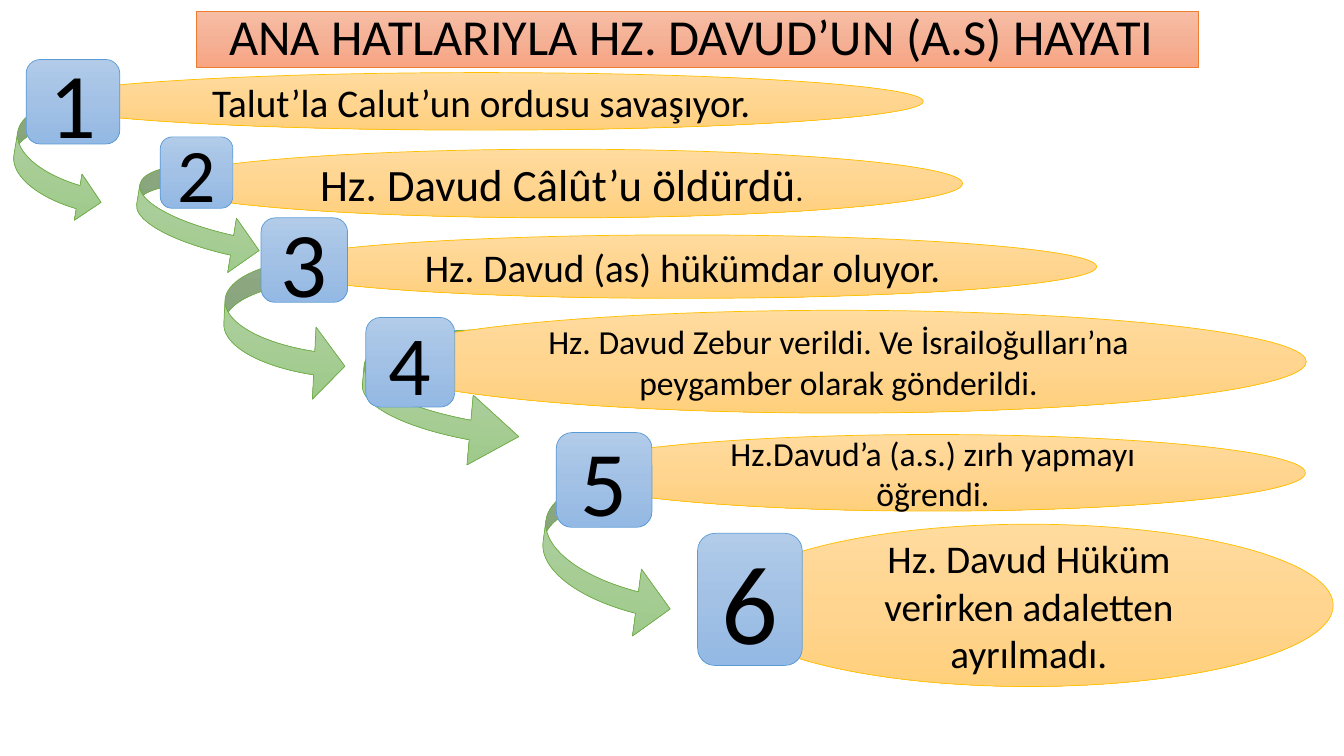
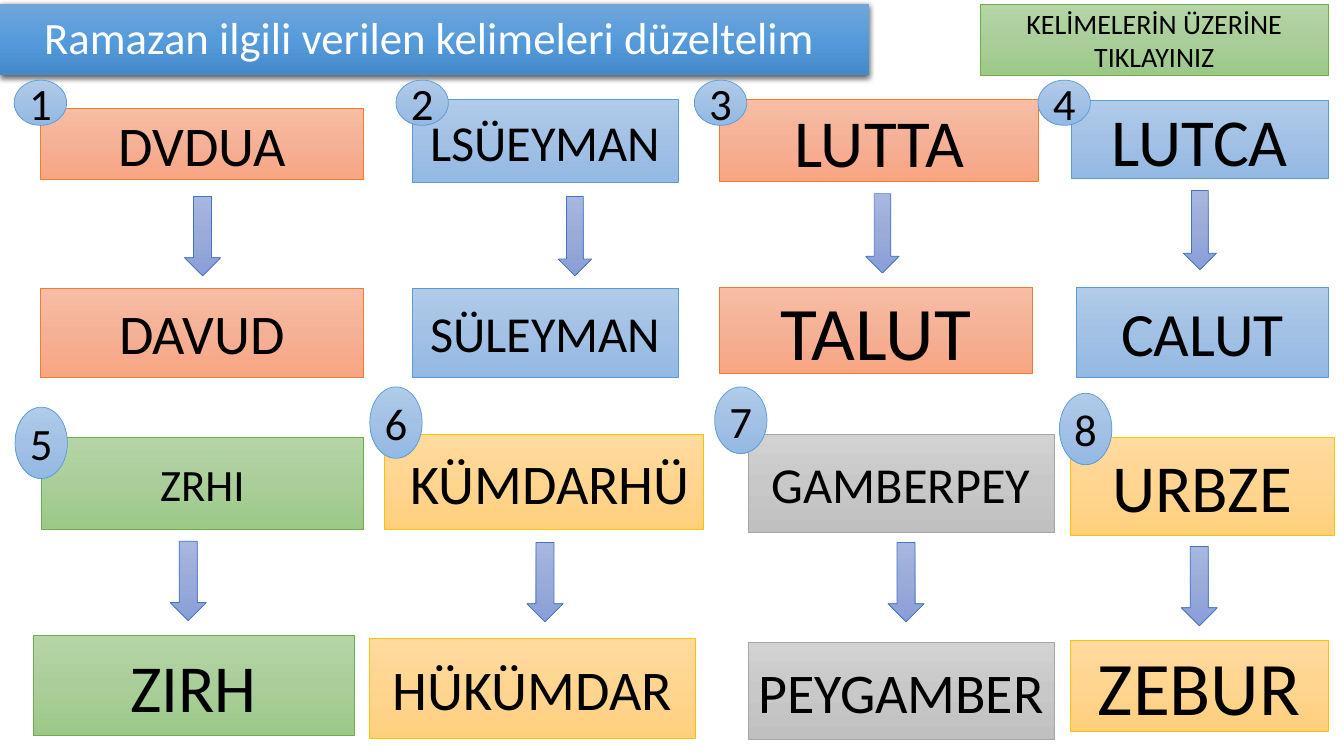
from copy import deepcopy
from dataclasses import dataclass

from pptx import Presentation
from pptx.dml.color import RGBColor
from pptx.enum.shapes import MSO_SHAPE
from pptx.enum.text import MSO_ANCHOR, MSO_AUTO_SIZE, PP_ALIGN
from pptx.oxml.xmlchemy import OxmlElement
from pptx.util import Cm, Pt

FONT = "Calibri"
BLACK = RGBColor(0x00, 0x00, 0x00)
WHITE = RGBColor(0xFF, 0xFF, 0xFF)


@dataclass
class Look:
    """Three gradient colours from top to bottom and an outline."""
    top: RGBColor
    middle: RGBColor
    bottom: RGBColor
    line: RGBColor | None


GREEN = Look(RGBColor(0xB5, 0xD5, 0xA7), RGBColor(0xAA, 0xCE, 0x9A),
             RGBColor(0x9C, 0xC9, 0x87), RGBColor(0x70, 0xAD, 0x47))
GOLD = Look(RGBColor(0xFF, 0xDB, 0x9E), RGBColor(0xFF, 0xD5, 0x90),
            RGBColor(0xFF, 0xD0, 0x7C), RGBColor(0xFF, 0xC0, 0x00))
ORANGE = Look(RGBColor(0xF7, 0xBD, 0xA5), RGBColor(0xF5, 0xB1, 0x96),
              RGBColor(0xF8, 0xA5, 0x82), RGBColor(0xED, 0x7D, 0x31))
BLUE = Look(RGBColor(0xB1, 0xCB, 0xE9), RGBColor(0xA3, 0xC1, 0xE5),
            RGBColor(0x93, 0xB9, 0xE4), RGBColor(0x5B, 0x9B, 0xD5))
GREY = Look(RGBColor(0xD2, 0xD2, 0xD2), RGBColor(0xC8, 0xC8, 0xC8),
            RGBColor(0xC0, 0xC0, 0xC0), RGBColor(0xA5, 0xA5, 0xA5))
INDIGO = Look(RGBColor(0xA8, 0xB7, 0xDF), RGBColor(0x9A, 0xAB, 0xD9),
              RGBColor(0x88, 0x9E, 0xD7), RGBColor(0x44, 0x72, 0xC4))
DEEP_BLUE = Look(RGBColor(0x71, 0xA6, 0xDB), RGBColor(0x55, 0x9B, 0xDB),
                 RGBColor(0x44, 0x8A, 0xCA), None)


@dataclass
class Step:
    """One life event: badge box, then oval and arrow offset from its corner."""
    badge: tuple
    badge_size: int
    oval: tuple
    runs: list
    arrow: tuple | None = None
    turn: float = 0
    adj: tuple = ()


STEPS = [
    Step((0.66, 1.5, 2.36, 2.13), 66, (0.33, 0.33, 22.28, 1.45),
         [("Talut’la Calut’un ordusu savaşıyor.", 28, False)],
         (-0.3, 0.89, 2.36, 3.12), 9.4, (0.25, 0.5, 0.25)),
    Step((4.04, 3.45, 1.83, 1.8), 54, (0, 0.31, 20.22, 1.73),
         [("Hz. Davud Câlût’u öldürdü", 32, False), (".", 18, True)],
         (-0.61, 0.54, 3.23, 2.77), 9.1, (0.18, 0.67, 0.25)),
    Step((6.58, 5.49, 2.18, 2.13), 66, (0.18, 0.43, 20.88, 1.6),
         [("Hz. Davud (as) hükümdar oluyor.", 28, False)],
         (-0.94, 0.94, 3.1, 3.63), 2.9, (0.19, 0.81, 0.25)),
    Step((9.22, 8, 2.24, 2.26), 60, (0.13, -0.18, 23.57, 2.59),
         [("Hz. Davud Zebur verildi. Ve İsrailoğulları’na peygamber olarak "
           "gönderildi.", 24, False)],
         (-0.1, 0.18, 4.04, 3.53), 5.1, (0.14, 0.5, 0.35)),
    Step((14.02, 10.9, 2.41, 2.39), 66, (0.1, 0.05, 18.78, 1.93),
         [("Hz.Davud’a (a.s.) zırh yapmayı öğrendi.", 24, False)],
         (-0.35, 0.91, 3.4, 4.17), 7.7, (0.16, 0.5, 0.25)),
    Step((17.58, 13.44, 2.64, 3.33), 80, (0.68, -0.23, 15.34, 4.09),
         [("Hz. Davud Hüküm verirken adaletten ayrılmadı.", 28, False)]),
]


@dataclass
class Puzzle:
    """A scrambled word box; answer, arrow and badge are offset from its corner."""
    look: Look
    box: tuple
    word: str
    word_size: int
    answer_box: tuple
    answer: str
    answer_size: int
    arrow: tuple
    badge: tuple
    arrow_w: float = 0.91
    badge_h: float = 1.8


PUZZLES = [
    Puzzle(ORANGE, (1.02, 2.72, 8.15, 1.8), "DVDUA", 40,
           (0, 4.54, 8.15, 2.24), "DAVUD", 40, (3.63, 2.23),
           (-0.66, -0.7), badge_h=1.14),
    Puzzle(BLUE, (10.39, 2.51, 6.71, 2.08), "LSÜEYMAN", 36,
           (0, 4.75, 6.71, 2.24), "SÜLEYMAN", 36, (3.68, 2.44),
           (-0.41, -0.49), arrow_w=0.84, badge_h=1.14),
    Puzzle(ORANGE, (18.14, 2.51, 8.03, 2.06), "LUTTA", 48,
           (0, 4.73, 7.87, 2.18), "TALUT", 54, (3.68, 2.37),
           (-0.64, -0.49), arrow_w=0.84, badge_h=1.14),
    Puzzle(BLUE, (27, 2.54, 6.48, 1.96), "LUTCA", 48,
           (0.13, 4.7, 6.35, 2.26), "CALUT", 44, (2.82, 2.26),
           (-0.84, -0.52), arrow_w=0.84, badge_h=1.14),
    Puzzle(GREEN, (1.04, 11.02, 8.13, 2.31), "ZRHI", 32,
           (-0.2, 4.98, 8.08, 2.54), "ZIRH", 48, (3.25, 2.62), (-0.66, -0.76)),
    Puzzle(GOLD, (9.68, 10.95, 8.05, 2.39), " KÜMDARHÜ", 40,
           (-0.36, 5.13, 8.2, 2.54), "HÜKÜMDAR", 40, (3.6, 2.72), (-0.36, -1.2)),
    Puzzle(GREY, (18.85, 10.95, 7.72, 2.46), "GAMBERPEY", 36,
           (0, 5.23, 7.72, 2.46), "PEYGAMBER", 40, (3.53, 2.72),
           (-0.84, -1.2), badge_h=1.68),
    Puzzle(GOLD, (26.97, 11.02, 6.65, 2.46), "URBZE", 48,
           (0, 5.11, 6.5, 2.29), "ZEBUR", 54, (2.8, 2.75), (-0.27, -1.11)),
]


def offset(origin, box):
    """Shift a box by the corner of another box."""
    return (origin[0] + box[0], origin[1] + box[1], *box[2:])


def paint(sp, look):
    """Apply a vertical three-colour gradient and a thin outline."""
    sp.shadow.inherit = False
    sp.fill.gradient()
    sp.fill.gradient_angle = 270
    first = sp.fill._fill._gradFill.gsLst[0]
    first.addnext(deepcopy(first))
    colours = (look.top, look.middle, look.bottom)
    for stop, pos, colour in zip(sp.fill.gradient_stops, (0, 0.5, 1), colours):
        stop.position = pos
        stop.color.rgb = colour
    if look.line is None:
        sp.line.fill.background()
    else:
        sp.line.color.rgb = look.line
        sp.line.width = Pt(0.5)


def write(sp, runs, colour=BLACK):
    """Write centred runs of (text, size, bold) into a shape."""
    tf = sp.text_frame
    tf.word_wrap = True
    tf.vertical_anchor = MSO_ANCHOR.MIDDLE
    p = tf.paragraphs[0]
    p.alignment = PP_ALIGN.CENTER
    for text, size, bold in runs:
        r = p.add_run()
        r.text = text
        r.font.name = FONT
        r.font.size = Pt(size)
        r.font.bold = bold
        r.font.color.rgb = colour
    return p


def add_block(s, kind, box, look, runs=()):
    """Add a painted preset shape with optional text."""
    sp = s.shapes.add_shape(kind, *map(Cm, box))
    paint(sp, look)
    if runs:
        write(sp, runs)
    return sp


def clear_margins(sp):
    """Let the text use the full inner box of a small shape."""
    tf = sp.text_frame
    tf.margin_left = tf.margin_right = tf.margin_top = tf.margin_bottom = 0


def add_titled_slide(prs, box, text, size, look, colour):
    """Add a title-only slide and format its title as a band."""
    s = prs.slides.add_slide(prs.slide_layouts[5])
    sp = s.shapes.title
    sp.left, sp.top, sp.width, sp.height = map(Cm, box)
    paint(sp, look)
    p = write(sp, [(text, size, False)], colour)
    p.line_spacing = 0.9
    sp.text_frame.auto_size = MSO_AUTO_SIZE.NONE
    return s


def cast_shadow(sp):
    """Give a shape a soft shadow straight below it."""
    shadow = OxmlElement("a:outerShdw")
    for name, value in (("blurRad", Pt(4.5)), ("dist", Pt(1.5)),
                        ("dir", 5400000), ("rotWithShape", 0)):
        shadow.set(name, str(int(value)))
    colour = OxmlElement("a:srgbClr")
    colour.set("val", str(BLACK))
    alpha = OxmlElement("a:alpha")
    alpha.set("val", "63000")
    colour.append(alpha)
    shadow.append(colour)
    sp._element.spPr.find(".//{*}effectLst").append(shadow)


def add_step(s, number, step):
    """Place the arrow, oval and number badge of one life event."""
    if step.arrow:
        arrow = add_block(s, MSO_SHAPE.CURVED_RIGHT_ARROW,
                          offset(step.badge, step.arrow), GREEN)
        arrow.rotation = step.turn
        for i, value in enumerate(step.adj):
            arrow.adjustments[i] = value
    add_block(s, MSO_SHAPE.OVAL, offset(step.badge, step.oval), GOLD, step.runs)
    add_block(s, MSO_SHAPE.ROUNDED_RECTANGLE, step.badge, BLUE,
              [(str(number), step.badge_size, False)])


def add_puzzle(s, number, puzzle):
    """Place a scrambled word, its answer, the arrow between and the badge."""
    add_block(s, MSO_SHAPE.RECTANGLE, puzzle.box, puzzle.look,
              [(puzzle.word, puzzle.word_size, False)])
    add_block(s, MSO_SHAPE.RECTANGLE, offset(puzzle.box, puzzle.answer_box),
              puzzle.look, [(puzzle.answer, puzzle.answer_size, False)])
    add_block(s, MSO_SHAPE.DOWN_ARROW,
              offset(puzzle.box, (*puzzle.arrow, puzzle.arrow_w, 2)), INDIGO)
    badge = add_block(s, MSO_SHAPE.OVAL,
                      offset(puzzle.box, (*puzzle.badge, 1.32, puzzle.badge_h)),
                      BLUE, [(str(number), 32, False)])
    clear_margins(badge)


def build_life_slide(prs):
    """Build the staircase of life events."""
    s = add_titled_slide(prs, (4.95, 0.28, 25.25, 1.42),
                         "ANA HATLARIYLA HZ. DAVUD’UN (A.S) HAYATI ", 36,
                         ORANGE, BLACK)
    for number, step in enumerate(STEPS, 1):
        add_step(s, number, step)


def build_puzzle_slide(prs):
    """Build the scrambled word exercise."""
    s = add_titled_slide(prs, (0, 0.1, 21.9, 1.8),
                         "Ramazan ilgili verilen kelimeleri düzeltelim ", 32,
                         DEEP_BLUE, WHITE)
    cast_shadow(s.shapes.title)
    hint = add_block(s, MSO_SHAPE.RECTANGLE, (24.71, 0.1, 8.76, 1.8), GREEN,
                     [("KELİMELERİN ÜZERİNE TIKLAYINIZ", 20, False)])
    clear_margins(hint)
    for number, puzzle in enumerate(PUZZLES, 1):
        add_puzzle(s, number, puzzle)


def main():
    """Build and save the presentation."""
    prs = Presentation()
    prs.slide_width, prs.slide_height = Cm(33.87), Cm(19.05)
    build_life_slide(prs)
    build_puzzle_slide(prs)
    prs.save("out.pptx")


if __name__ == "__main__":
    main()
